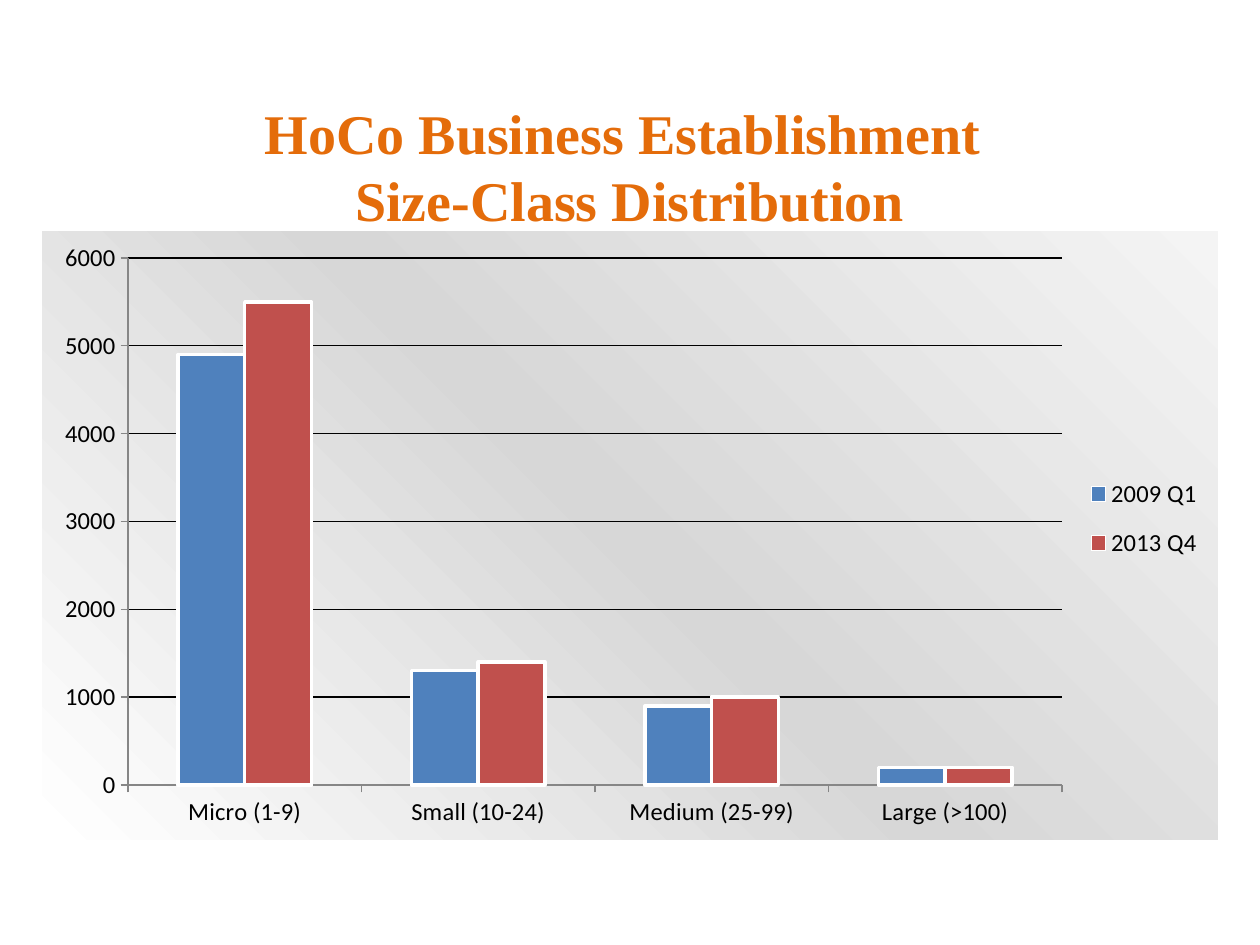
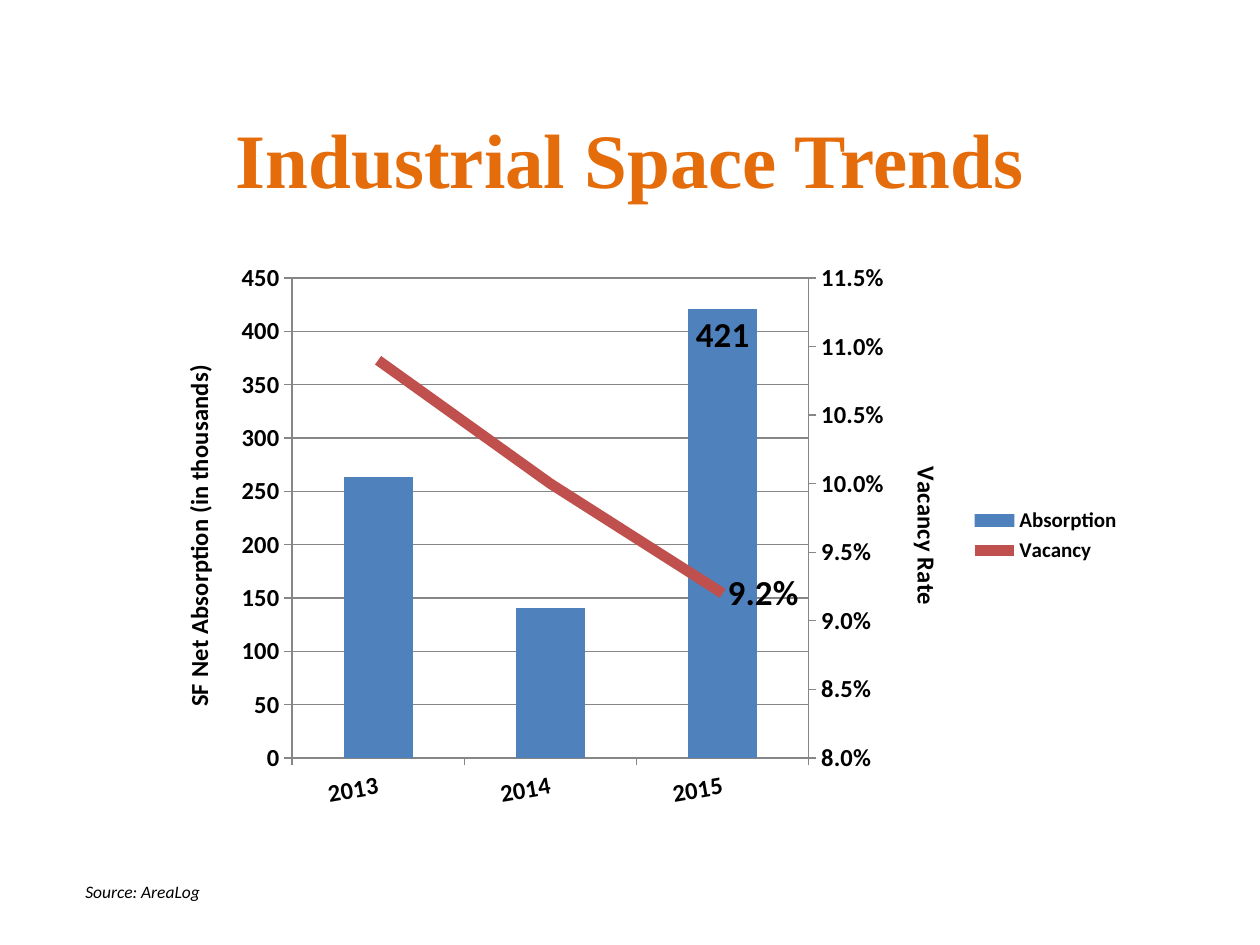
from copy import deepcopy

from pptx import Presentation
from pptx.chart.axis import CategoryAxis, ValueAxis
from pptx.chart.data import CategoryChartData as ChartData
from pptx.dml.color import RGBColor
from pptx.enum.chart import (
    XL_CHART_TYPE as ChartType,
    XL_LABEL_POSITION as LabelSpot,
    XL_LEGEND_POSITION as LegendSpot,
    XL_MARKER_STYLE as Marker,
    XL_TICK_MARK as Tick,
)
from pptx.enum.text import MSO_ANCHOR as Anchor, MSO_AUTO_SIZE as AutoSize, PP_ALIGN as Align
from pptx.oxml import parse_xml
from pptx.oxml.ns import nsdecls
from pptx.util import Emu, Pt

PX_PER_INCH = 126
EMU_PER_INCH = 914400
COLORS = {
    "title": "E46C0A",
    "text": "000000",
    "blue": "4F81BD",
    "red": "C0504D",
    "white": "FFFFFF",
    "axis": "868686",
    "light": "F4F4F4",
    "mid": "D7D7D7",
}
BODY_FONT = "Calibri"
TITLE_FONT = "Times New Roman"


def px(length):
    return Emu(round(length * EMU_PER_INCH / PX_PER_INCH))


def color(name):
    return RGBColor.from_string(COLORS[name])


def style_font(font, size, bold=False, italic=False, name=BODY_FONT, tint="text"):
    font.size = Pt(size)
    font.bold = bold
    font.italic = italic
    font.name = name
    font.color.rgb = color(tint)


def write(frame, text, align=Align.LEFT, **style):
    frame.text = text
    para = frame.paragraphs[0]
    para.alignment = align
    for span in para.runs:
        style_font(span.font, **style)


def add_page(deck, title, box, size):
    page = deck.slides.add_slide(deck.slide_layouts[5])
    holder = page.shapes.title
    holder.left, holder.top, holder.width, holder.height = map(px, box)
    frame = holder.text_frame
    frame.auto_size = AutoSize.NONE
    frame.vertical_anchor = Anchor.MIDDLE
    write(frame, title, align=Align.CENTER, size=size, bold=True, name=TITLE_FONT, tint="title")
    return page


def add_source(page, text, box):
    frame = page.shapes.add_textbox(*map(px, box)).text_frame
    frame.word_wrap = True
    frame.auto_size = AutoSize.SHAPE_TO_FIT_TEXT
    write(frame, text, size=10, italic=True)


def add_columns(page, box, plot_box, categories, series, legend_size, bold=False):
    data = ChartData()
    data.categories = categories
    for name, values, number_format in series:
        data.add_series(name, values, number_format)
    chart = page.shapes.add_chart(ChartType.COLUMN_CLUSTERED, *map(px, box), data).chart
    chart.has_title = False
    style_font(chart.font, 10)
    chart.has_legend = True
    chart.legend.position = LegendSpot.RIGHT
    chart.legend.include_in_layout = False
    style_font(chart.legend.font, legend_size, bold=bold)
    bars = chart.plots[0]
    bars.gap_width = 150
    bars.overlap = 0
    bars.vary_by_categories = False
    for column, tint in zip(bars.series, ("blue", "red")):
        column.format.fill.solid()
        column.format.fill.fore_color.rgb = color(tint)
    area = chart.element.xpath("c:chart/c:plotArea")[0]
    clear(area, "c:layout")
    area.insert(0, build_layout(box, plot_box, target='<c:layoutTarget val="inner"/>'))
    return chart


def clear(parent, query):
    for child in parent.xpath(query):
        parent.remove(child)


def build_layout(box, part_box, target=""):
    left, top, width, height = part_box
    shares = {"x": left / box[2], "y": top / box[3], "w": width / box[2], "h": height / box[3]}
    parts = "".join(f'<c:{key} val="{share:.4f}"/>' for key, share in shares.items())
    return parse_xml(
        f'<c:layout {nsdecls("c")}><c:manualLayout>{target}'
        f'<c:xMode val="edge"/><c:yMode val="edge"/>{parts}</c:manualLayout></c:layout>'
    )


def place_legend(chart, box, legend_box):
    legend = chart.element.xpath("c:chart/c:legend")[0]
    clear(legend, "c:layout")
    legend.xpath("c:legendPos")[0].addnext(build_layout(box, legend_box))


def style_axis(axis, bold=False, grid=None, scale=None, number_format=None, title=None):
    axis.major_tick_mark = Tick.OUTSIDE
    axis.minor_tick_mark = Tick.NONE
    axis.format.line.color.rgb = color("axis")
    axis.format.line.width = Pt(0.75)
    style_font(axis.tick_labels.font, 14, bold=bold)
    axis.has_major_gridlines = grid is not None
    if grid:
        line = axis.major_gridlines.format.line
        line.color.rgb = color(grid)
        line.width = Pt(0.75)
    if scale:
        axis.minimum_scale, axis.maximum_scale, axis.major_unit = scale
    if number_format:
        axis.tick_labels.number_format = number_format
        axis.tick_labels.number_format_is_linked = False
    if title:
        write(axis.axis_title.text_frame, title, align=Align.CENTER, size=14, bold=True)


def shade_chart(chart):
    stops = "".join(
        f'<a:gs pos="{place}"><a:srgbClr val="{COLORS[name]}"/></a:gs>'
        for place, name in ((0, "light"), (50000, "mid"), (100000, "white"))
    )
    chart.element.xpath("c:chart")[0].addnext(parse_xml(
        f'<c:spPr {nsdecls("c", "a")}><a:gradFill><a:gsLst>{stops}</a:gsLst>'
        '<a:lin ang="8100000" scaled="0"/></a:gradFill><a:ln><a:noFill/></a:ln></c:spPr>'
    ))


def move_to_right_axis(chart):
    area = chart.element.xpath("c:chart/c:plotArea")[0]
    bars = area.xpath("c:barChart")[0]
    moved = bars.xpath("c:ser")[-1]
    clear(moved, "c:invertIfNegative")
    lines = parse_xml(
        f'<c:lineChart {nsdecls("c")}><c:grouping val="standard"/><c:varyColors val="0"/>'
        '<c:marker val="1"/><c:axId val="5001"/><c:axId val="5002"/></c:lineChart>'
    )
    lines.insert(2, moved)
    bars.addnext(lines)
    category, value = (deepcopy(area.xpath(kind)[0]) for kind in ("c:catAx", "c:valAx"))
    area.xpath("c:valAx")[0].addnext(value)
    value.addnext(category)
    for axis, own, other, crossing in (
        (category, "5001", "5002", "autoZero"),
        (value, "5002", "5001", "max"),
    ):
        axis.xpath("c:axId")[0].set("val", own)
        cross = axis.xpath("c:crossAx")[0]
        cross.set("val", other)
        clear(axis, "c:crosses | c:crossesAt")
        cross.addnext(parse_xml(f'<c:crosses {nsdecls("c")} val="{crossing}"/>'))
    value.xpath("c:axPos")[0].set("val", "r")
    CategoryAxis(category).visible = False
    return ValueAxis(value)


def rotate_text(chart, query, angles):
    for body, angle in zip(chart.element.xpath(query), angles):
        body.set("rot", str(angle * 60000))
        body.set("vert", "horz")


def label_last(series, position):
    series.data_labels.show_value = False
    label = series.points[len(series.values) - 1].data_label
    style_font(label.font, 20, bold=True)
    label.position = position


def add_size_classes(page, box):
    chart = add_columns(
        page, box, (86, 27, 934, 527),
        ("Micro (1-9)", "Small (10-24)", "Medium (25-99)", "Large (>100)"),
        (("2009 Q1", (4900, 1300, 900, 200), "General"),
         ("2013 Q4", (5500, 1400, 1000, 200), "General")),
        legend_size=14,
    )
    place_legend(chart, box, (1041, 229, 122, 117))
    style_axis(chart.category_axis)
    style_axis(chart.value_axis, grid="text", scale=(0, 6000, 1000))
    for column in chart.plots[0].series:
        column.format.line.color.rgb = color("white")
        column.format.line.width = Pt(2)
    shade_chart(chart)


def add_space_trends(page, box):
    chart = add_columns(
        page, box, (134, 26, 517, 480),
        ("2013", "2014", "2015"),
        (("Absorption", (263, 141, 421), "General"),
         ("Vacancy", (0.109, 0.1, 0.092), "0.0%")),
        legend_size=12, bold=True,
    )
    left_axis = chart.value_axis
    right_axis = move_to_right_axis(chart)
    style_axis(chart.category_axis, bold=True)
    style_axis(left_axis, bold=True, grid="axis", scale=(0, 450, 50),
               title="SF Net Absorption (in thousands)")
    style_axis(right_axis, bold=True, scale=(0.08, 0.115, 0.005),
               number_format="0.0%", title="Vacancy Rate")
    rotate_text(chart, ".//c:valAx/c:title//a:bodyPr", (-90, 90))
    rotate_text(chart, ".//c:catAx/c:txPr/a:bodyPr", (-10,))
    absorption, vacancy = (plot.series[0] for plot in chart.plots)
    vacancy.smooth = False
    vacancy.marker.style = Marker.NONE
    vacancy.format.line.color.rgb = color("red")
    vacancy.format.line.width = Pt(6)
    label_last(absorption, LabelSpot.INSIDE_END)
    label_last(vacancy, LabelSpot.RIGHT)


def main():
    deck = Presentation()
    deck.slide_width, deck.slide_height = px(1260), px(945)

    sizes = add_page(deck, "HoCo Business Establishment \vSize-Class Distribution",
                     (63, 115, 1134, 101), 32)
    add_size_classes(sizes, (42, 231, 1176, 609))

    trends = add_page(deck, "Industrial Space Trends", (0, 105, 1260, 105), 44)
    add_source(trends, "Source: AreaLog", (73, 875, 252, 34))
    add_space_trends(trends, (158, 252, 976, 567))

    deck.save("out.pptx")


if __name__ == "__main__":
    main()
